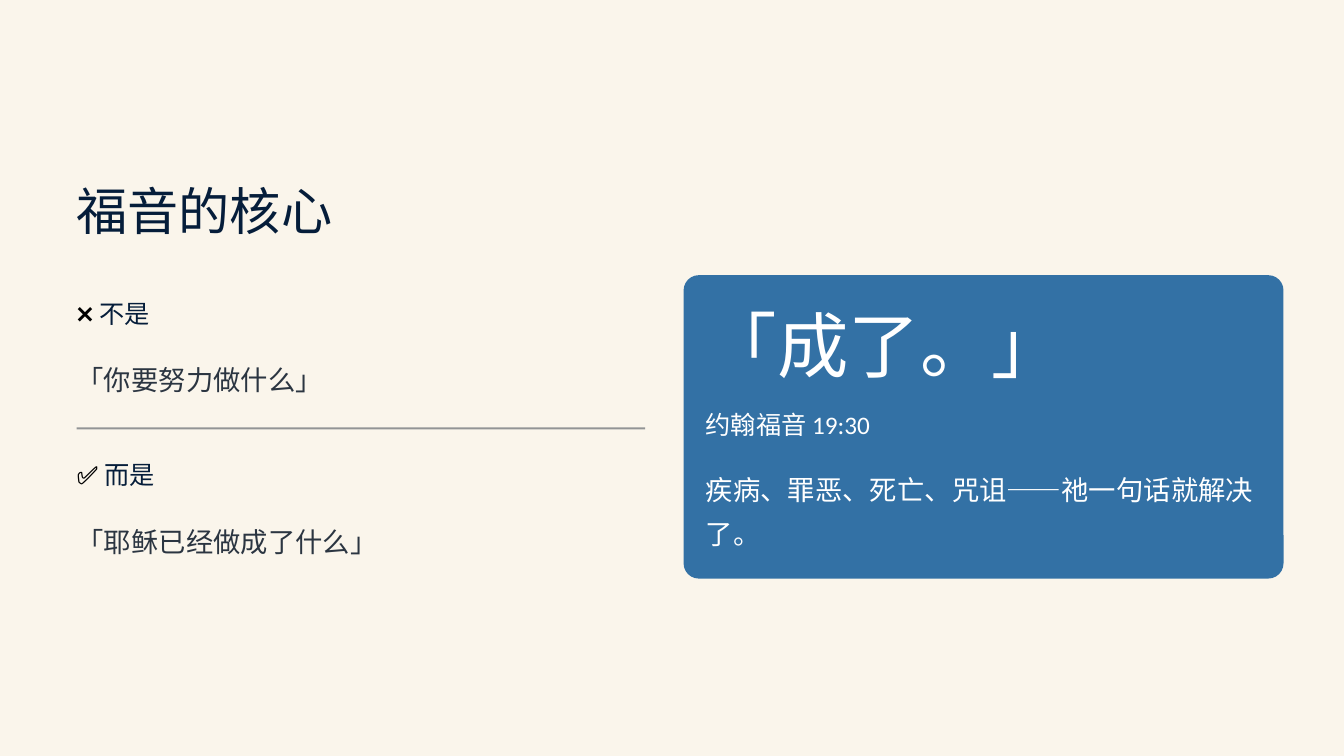
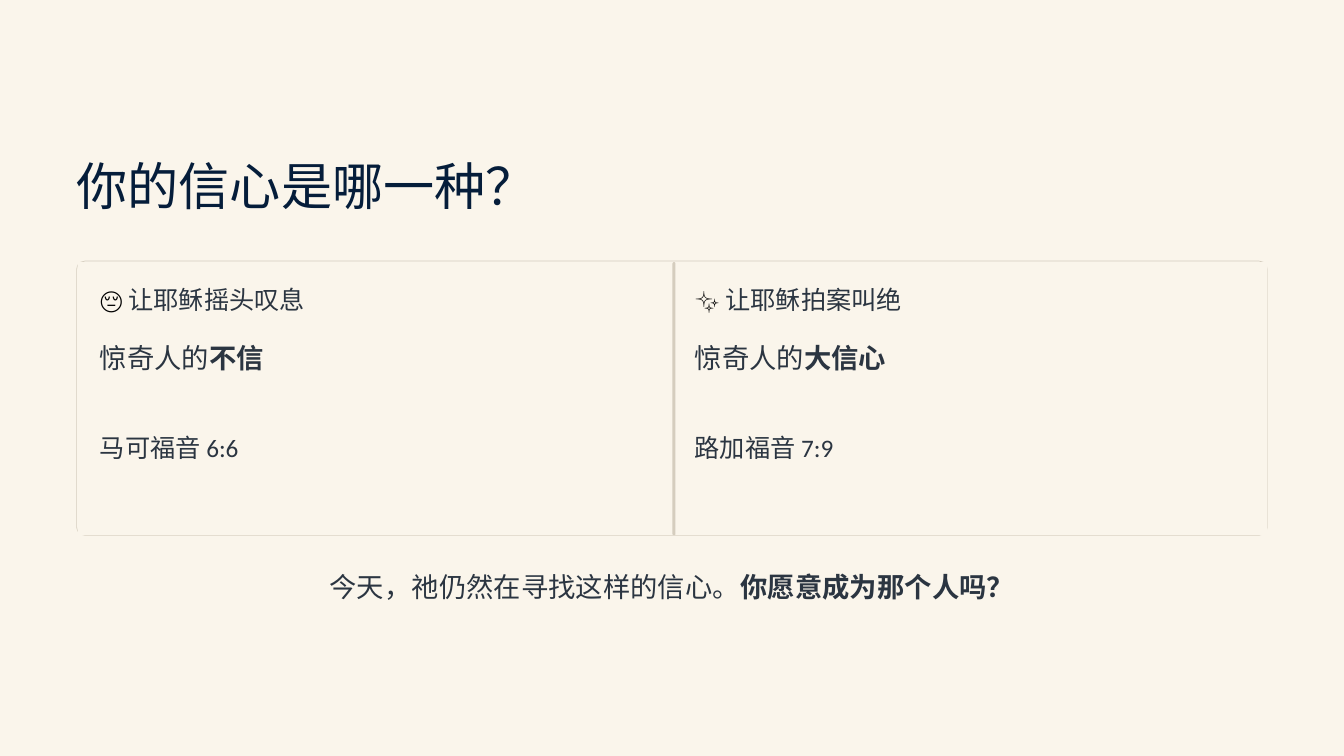
"""Build two slides on the core of the gospel and two kinds of faith."""
import pptx
import pptx.dml.color
import pptx.enum.shapes
import pptx.enum.text
import pptx.util
from lxml import etree

PX = 9144
COLORS = {
    "paper": "FAF5EB",
    "navy": "051D3A",
    "ink": "2B3541",
    "blue": "3371A5",
    "sand": "D5CDBE",
    "white": "FFFFFF",
    "black": "000000",
}
RECT = pptx.enum.shapes.MSO_SHAPE.RECTANGLE
ROUNDED = pptx.enum.shapes.MSO_SHAPE.ROUNDED_RECTANGLE
LEFT = pptx.enum.text.PP_ALIGN.LEFT
CENTER = pptx.enum.text.PP_ALIGN.CENTER
MARGIN = 76


def px(*lengths):
    return [pptx.util.Emu(length * PX) for length in lengths]


def rgb(name):
    return pptx.dml.color.RGBColor.from_string(COLORS[name])


def add_text(slide, box, *parts, size=18, font="Calibri", color="ink",
             spacing=1.04, align=LEFT):
    """Each part is a string or a (string, format overrides) pair."""
    frame = slide.shapes.add_textbox(*px(*box)).text_frame
    frame.word_wrap = True
    frame.margin_left = frame.margin_right = 0
    frame.margin_top = frame.margin_bottom = 0
    line = frame.paragraphs[0]
    line.line_spacing = spacing
    line.alignment = align
    for part in parts:
        words, extra = (part, {}) if isinstance(part, str) else part
        run = line.add_run()
        run.text = words
        run.font.size = pptx.util.Pt(size)
        run.font.name = font
        run.font.bold = extra.get("bold")
        run.font.color.rgb = rgb(extra.get("color", color))


def add_title(slide, top, words):
    add_text(slide, (MARGIN, top, 580, 64), words, size=36.5, color="navy")


def add_label(slide, left, top, icon, words, color):
    add_text(slide, (left, top, 323, 33), (icon, {"color": "black"}),
             f" {words}", color=color)


def add_body(slide, box, *parts, **style):
    add_text(slide, box, *parts, size=19.5, font="Roboto", spacing=1.33, **style)


def add_panel(slide, box, fill, kind=RECT, corner=None, outline=None, opacity=None):
    panel = slide.shapes.add_shape(kind, *px(*box))
    panel.shadow.inherit = False
    panel.fill.solid()
    panel.fill.fore_color.rgb = rgb(fill)
    if corner is not None:
        panel.adjustments[0] = corner
    if outline:
        panel.line.color.rgb = rgb(outline)
        panel.line.width = pptx.util.Pt(0.5)
    else:
        panel.line.fill.background()
    if opacity is not None:
        tint = panel.fill._xPr.solidFill[0]
        alpha = etree.SubElement(tint, pptx.oxml.ns.qn("a:alpha"))
        alpha.set("val", str(opacity * 1000))


def build_core(slide):
    add_title(slide, 176, "福音的核心")
    contrasts = [("❌", "不是", "「你要努力做什么」"),
                 ("✅", "而是", "「耶稣已经做成了什么」")]
    for row, (icon, label, claim) in enumerate(contrasts):
        top = 295 + 160 * row
        add_label(slide, MARGIN, top, icon, label, "navy")
        add_body(slide, (MARGIN, top + 55, 564, 44), claim)
    add_panel(slide, (MARGIN, 424, 564, 2), "ink", opacity=50)

    add_panel(slide, (678, 273, 595, 301), "blue", ROUNDED, corner=0.05)
    add_text(slide, (700, 295, 551, 89), "「成了。」", size=51, color="white")
    add_text(slide, (700, 405, 323, 32), "约翰福音 19:30", color="white")
    add_body(slide, (700, 459, 551, 87),
             "疾病、罪恶、死亡、咒诅——祂一句话就解决了。", color="white")


def build_choice(slide):
    add_title(slide, 151, "你的信心是哪一种？")
    add_panel(slide, (MARGIN, 259, 1181, 272), "paper", ROUNDED,
              corner=0.03, outline="sand")
    faiths = [("😔", "让耶稣摇头叹息", "不信", "马可福音 6:6"),
              ("✨", "让耶稣拍案叫绝", "大信心", "路加福音 7:9")]
    width = 590
    for column, (icon, label, kind, verse) in enumerate(faiths):
        left = MARGIN + 1 + width * column
        add_panel(slide, (left, 260, width, 271), "paper")
        if column:
            add_panel(slide, (left, 260, 3, 271), "sand", ROUNDED, corner=0.5)
        inner = left + 22
        add_label(slide, inner, 281, icon, label, "ink")
        add_body(slide, (inner, 328, 546, 87), "惊奇人的", (kind, {"bold": True}))
        add_text(slide, (inner, 428, 257, 32), verse)
    add_body(slide, (43, 555, 1247, 44), "今天，祂仍然在寻找这样的信心。",
             ("你愿意成为那个人吗？", {"bold": True}), align=CENTER)


def main():
    deck = pptx.Presentation()
    deck.slide_width, deck.slide_height = px(1333, 750)
    backdrop = deck.slide_master.background.fill
    backdrop.solid()
    backdrop.fore_color.rgb = rgb("paper")
    for build in (build_core, build_choice):
        build(deck.slides.add_slide(deck.slide_layouts[6]))
    deck.save("out.pptx")


if __name__ == "__main__":
    main()
